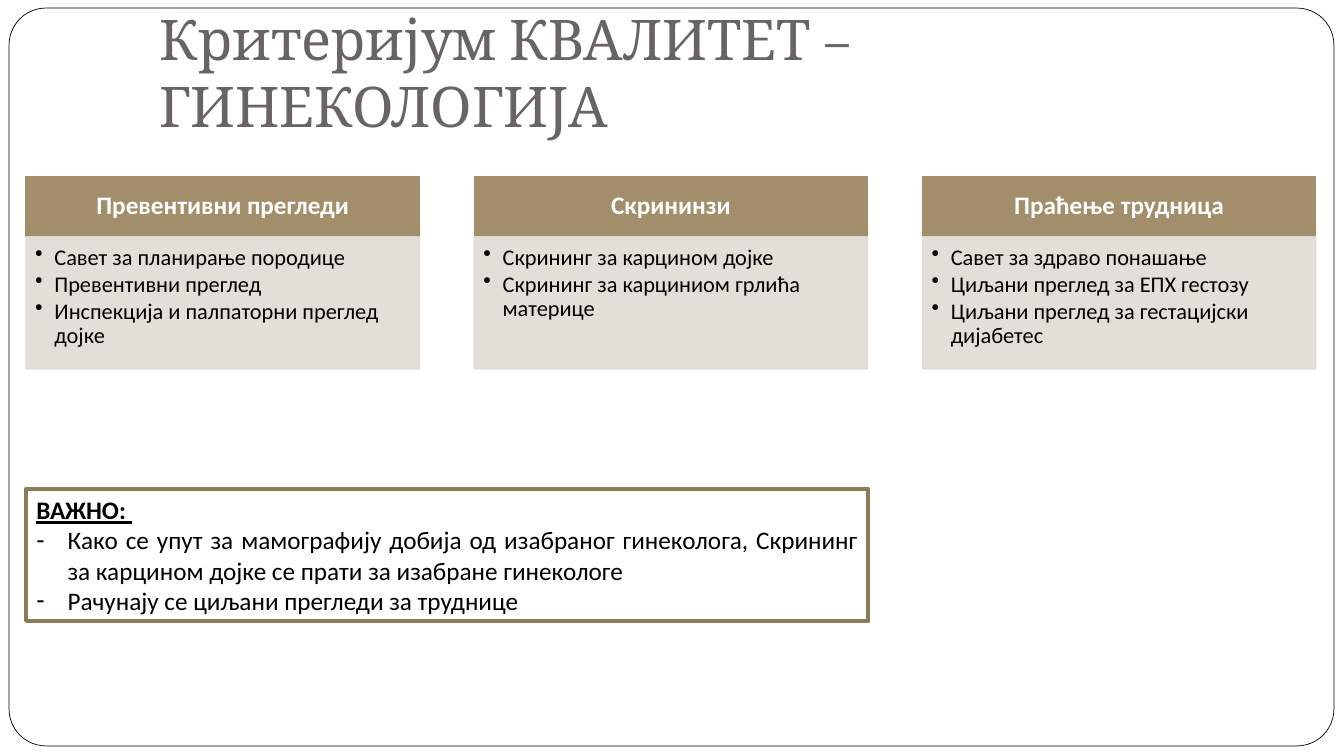
from lxml import etree
from pptx import Presentation
from pptx.dml.color import RGBColor
from pptx.enum import shapes, text
from pptx.oxml.ns import qn
from pptx.util import Inches, Pt

COLORS = {
    "white": "FFFFFF", "black": "000000", "title": "696464",
    "header": "A28E6A", "panel": "E0DBD4", "note": "8B7B57",
}
COLUMNS = [
    ("Превентивни прегледи", ["Савет за планирање породице", "Превентивни преглед",
                              "Инспекција и палпаторни преглед дојке"]),
    ("Скрининзи", ["Скрининг за карцином дојке",
                   "Скрининг за карциниом грлића материце"]),
    ("Праћење трудница", ["Савет за здраво понашање", "Циљани преглед за ЕПХ гестозу",
                          "Циљани преглед за гестацијски дијабетес"]),
]
NOTES = [
    "Како се упут за мамографију добија од изабраног гинеколога, "
    "Скрининг за карцином дојке се прати за изабране гинекологе",
    "Рачунају се циљани прегледи за труднице ",
]
LEFT, COLUMN_WIDTH, COLUMN_STEP = 0.26, 3.9, 4.445
HEADER_TOP, HEADER_HEIGHT, PANEL_HEIGHT = 1.75, 0.6, 1.31


def rgb(name):
    return RGBColor.from_string(COLORS[name])


def place(shape, left, top, width, height):
    shape.left, shape.top = Inches(left), Inches(top)
    shape.width, shape.height = Inches(width), Inches(height)


def set_alpha(color_format_parent, percent):
    """Make the solid colours below an element partly transparent."""
    for color in color_format_parent.iter(qn("a:srgbClr")):
        etree.SubElement(color, qn("a:alpha")).set("val", str(percent * 1000))


def set_bullet(paragraph, bullet, indent):
    properties = paragraph._p.get_or_add_pPr()
    properties.set("marL", str(Inches(indent)))
    properties.set("indent", str(-Inches(indent)))
    if bullet:
        etree.SubElement(properties, qn("a:buChar")).set("char", bullet)
    else:
        etree.SubElement(properties, qn("a:buNone"))


def set_frame(shape, anchor, margins):
    frame = shape.text_frame
    frame.word_wrap = True
    frame.auto_size = text.MSO_AUTO_SIZE.NONE
    frame.vertical_anchor = anchor
    (frame.margin_left, frame.margin_top,
     frame.margin_right, frame.margin_bottom) = map(Inches, margins)
    return frame


def write(frame, content, size, color="black", font="Calibri", bold=False,
          underline=False, align=text.PP_ALIGN.LEFT, line_spacing=1.0,
          space_after=0, bullet=None, indent=0):
    """Fill the first empty paragraph, or add one, with formatted text."""
    paragraph = frame.paragraphs[0]
    if paragraph.runs:
        paragraph = frame.add_paragraph()
    paragraph.alignment = align
    paragraph.line_spacing = line_spacing
    paragraph.space_before, paragraph.space_after = Pt(0), Pt(space_after)
    set_bullet(paragraph, bullet, indent)
    run = paragraph.add_run()
    run.text = content
    run.font.name, run.font.size = font, Pt(size)
    run.font.bold, run.font.underline = bold, underline
    run.font.color.rgb = rgb(color)


def add_box(slide, left, top, width, height, fill, line, line_width=1,
            kind=shapes.MSO_SHAPE.RECTANGLE):
    shape = slide.shapes.add_shape(kind, 0, 0, 0, 0)
    place(shape, left, top, width, height)
    shape.shadow.inherit = False
    shape.fill.solid()
    shape.fill.fore_color.rgb = rgb(fill)
    shape.line.color.rgb = rgb(line)
    shape.line.width = Pt(line_width)
    return shape


def add_page_frame(slide):
    border = add_box(slide, 0.09, 0.08, 13.14, 7.32, "white", "black", 0.5,
                     shapes.MSO_SHAPE.ROUNDED_RECTANGLE)
    border.adjustments[0] = 0.05
    slide.shapes._spTree.insert(2, border._element)  # behind everything


def add_column(slide, left, heading, items):
    header = add_box(slide, left, HEADER_TOP, COLUMN_WIDTH, HEADER_HEIGHT,
                     "header", "header")
    frame = set_frame(header, text.MSO_ANCHOR.MIDDLE, (0.14, 0.08, 0.14, 0.08))
    write(frame, heading, 18, "white", bold=True, align=text.PP_ALIGN.CENTER,
          line_spacing=0.9)

    panel = add_box(slide, left, HEADER_TOP + HEADER_HEIGHT, COLUMN_WIDTH,
                    PANEL_HEIGHT, "panel", "panel")
    set_alpha(panel._element.spPr, 90)
    frame = set_frame(panel, text.MSO_ANCHOR.TOP, (0.09, 0.09, 0.12, 0.14))
    for item in items:
        write(frame, item, 16, line_spacing=0.9, space_after=2,
              bullet="•", indent=0.19)


def fill_title(title):
    place(title, 1.48, 0.23, 11.33, 1.25)
    frame = set_frame(title, text.MSO_ANCHOR.BOTTOM, (0.1, 0.05, 0.1, 0.1))
    write(frame, "Критеријум КВАЛИТЕТ – ГИНЕКОЛОГИЈА", 40, "title", "Cambria")


def fill_note(note):
    place(note, LEFT, 4.85, 8.35, 1.31)
    note.line.color.rgb = rgb("note")
    note.line.width = Pt(3)
    frame = set_frame(note, text.MSO_ANCHOR.MIDDLE, (0.1, 0.05, 0.1, 0.05))
    justify = text.PP_ALIGN.JUSTIFY
    write(frame, "ВАЖНО: ", 18, bold=True, underline=True, align=justify)
    for item in NOTES:
        write(frame, item, 18, align=justify, bullet="-", indent=0.31)


def main():
    presentation = Presentation()
    presentation.slide_width = Inches(13.33)
    presentation.slide_height = Inches(7.5)
    slide = presentation.slides.add_slide(presentation.slide_layouts[1])

    # Frame and title
    add_page_frame(slide)
    fill_title(slide.shapes.title)

    # Three columns of examinations
    for index, (heading, items) in enumerate(COLUMNS):
        add_column(slide, LEFT + index * COLUMN_STEP, heading, items)

    # Important note
    fill_note(slide.placeholders[1])

    presentation.save("out.pptx")


if __name__ == "__main__":
    main()
